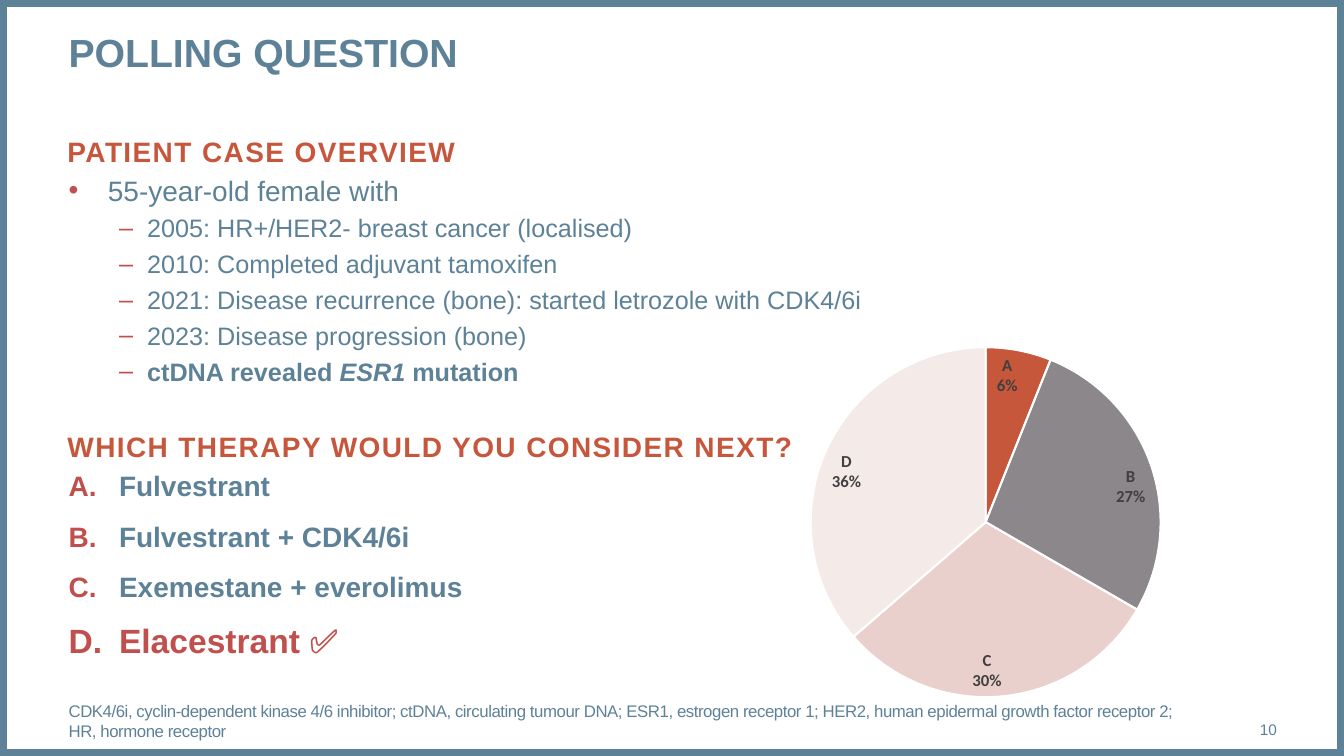
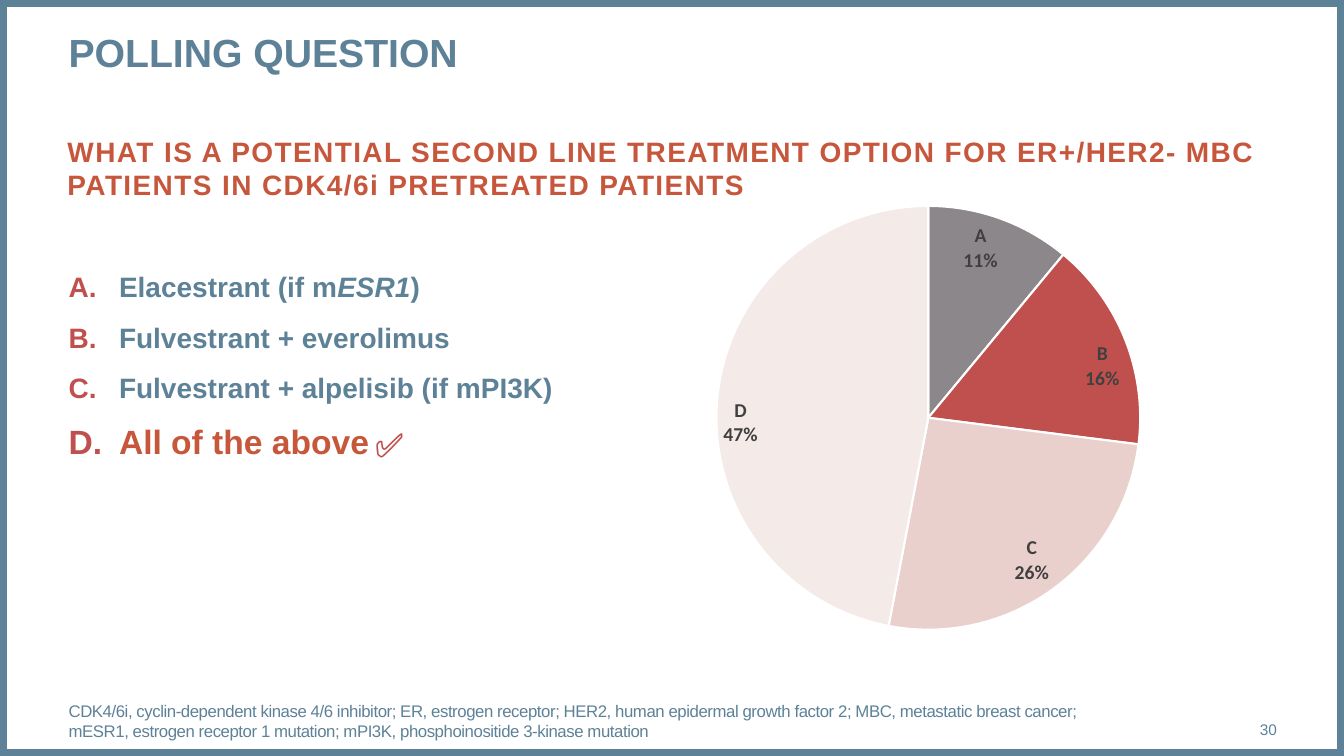
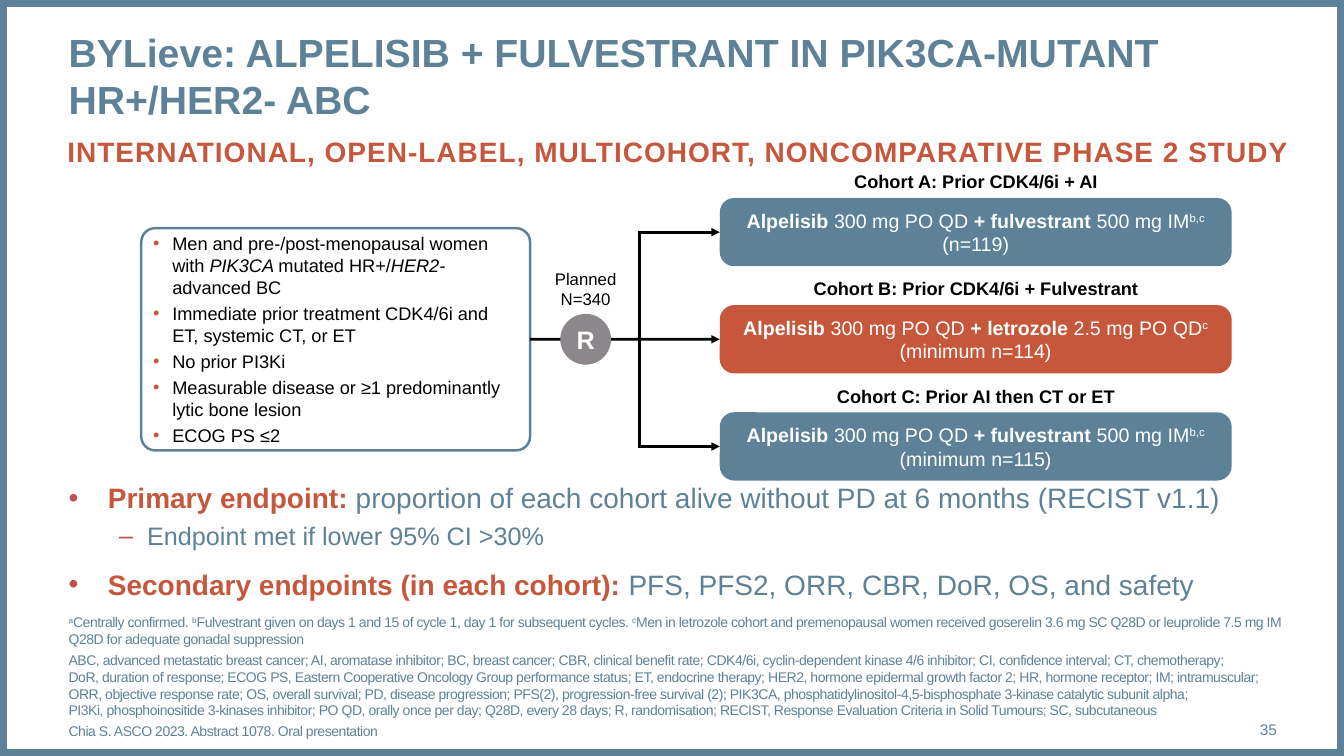
from copy import deepcopy

from lxml import etree
from pptx import Presentation
from pptx.chart.data import CategoryChartData
from pptx.dml.color import RGBColor
from pptx.enum.chart import XL_CHART_TYPE, XL_LABEL_POSITION
from pptx.enum.shapes import MSO_CONNECTOR, MSO_SHAPE
from pptx.enum.text import MSO_ANCHOR, PP_ALIGN
from pptx.oxml.ns import qn
from pptx.util import Cm, Pt

LEFT, CENTER, RIGHT = PP_ALIGN.LEFT, PP_ALIGN.CENTER, PP_ALIGN.RIGHT
TOP, MIDDLE = MSO_ANCHOR.TOP, MSO_ANCHOR.MIDDLE
RECT, ROUNDED, OVAL = MSO_SHAPE.RECTANGLE, MSO_SHAPE.ROUNDED_RECTANGLE, MSO_SHAPE.OVAL
STRAIGHT, PIE = MSO_CONNECTOR.STRAIGHT, XL_CHART_TYPE.PIE
INSIDE_END = XL_LABEL_POSITION.INSIDE_END


class Theme:
    font, chart_font = "Arial", "Calibri"
    blue, heading, orange, red = "5D8298", "C7573C", "C6573B", "C0504D"
    grey, rose, blush = "8B878B", "E9D0CD", "F4EAE7"
    black, white, label = "000000", "FFFFFF", "404040"
    title_size, heading_size, answer_size = 28, 20, 24
    body_size, sub_size, note_size, number_size = 20, 18, 12, 11
    card_size, small_size, source_size = 14, 13, 10


# Paragraph and run formats used more than once
HEADING = dict(size=Theme.heading_size, color=Theme.heading, bold=True, spacing=1, before=12)
BULLET = dict(bullet="•", hang=0.99, before=12)
DASH = dict(bullet="–", indent=1.98, hang=0.71, before=4, level=1, size=Theme.sub_size)
OPTION = dict(bullet="alphaUcPeriod", hang=1.27, before=12, bold=True)
NOTE = dict(spacing=-0.3, before=3)
BOLD, ITALIC, RAISED = dict(bold=True), dict(italic=True), dict(raised=True)
LEAD = dict(bold=True, color=Theme.orange)


def place(slide, box, preset=None, fill=None, line=None, weight=1, corner=None,
          margin=0, anchor=TOP, wrap=True):
    """Add a text box, or a preset shape, at a box given in centimetres."""
    box = [Cm(value) for value in box]
    if preset is None:
        shape = slide.shapes.add_textbox(*box)
    else:
        shape = slide.shapes.add_shape(preset, *box)
        shape.shadow.inherit = False
        if corner is not None:
            shape.adjustments[0] = corner
        if fill:
            shape.fill.solid()
            shape.fill.fore_color.rgb = RGBColor.from_string(fill)
        else:
            shape.fill.background()
        if line:
            shape.line.color.rgb = RGBColor.from_string(line)
            shape.line.width = Pt(weight)
        else:
            shape.line.fill.background()
    frame = shape.text_frame
    frame.word_wrap = wrap
    frame.vertical_anchor = anchor
    frame.margin_left = frame.margin_right = frame.margin_top = frame.margin_bottom = Cm(margin)
    return shape


def write(shape, *runs, align=LEFT, before=0, after=0, level=0, bullet=None,
          bullet_color=Theme.red, hang=0, indent=None, **style):
    """Add a paragraph; a run is a string or a (string, format) pair."""
    frame = shape.text_frame
    paragraph = frame.paragraphs[-1]
    if paragraph.runs:
        paragraph = frame.add_paragraph()
    paragraph.alignment, paragraph.level = align, level
    paragraph.space_before, paragraph.space_after = Pt(before), Pt(after)
    if bullet:
        props = paragraph._p.get_or_add_pPr()
        props.set("marL", str(int(Cm(hang if indent is None else indent))))
        props.set("indent", str(-int(Cm(hang))))
        tint = etree.SubElement(props, qn("a:buClr"))
        etree.SubElement(tint, qn("a:srgbClr"), val=bullet_color)
        etree.SubElement(props, qn("a:buFont"), typeface=Theme.font)
        if len(bullet) > 1:
            etree.SubElement(props, qn("a:buAutoNum"), type=bullet)
        else:
            etree.SubElement(props, qn("a:buChar"), char=bullet)
    for item in runs:
        text, change = (item, {}) if isinstance(item, str) else item
        if text == "\n":
            paragraph.add_line_break()
            paragraph._p[-1].append(deepcopy(paragraph.runs[-1]._r.rPr))
            continue
        look = {**style, **change}
        run = paragraph.add_run()
        run.text = text
        run.font.name = Theme.font
        run.font.size = Pt(look.get("size", Theme.body_size))
        run.font.bold = look.get("bold", False)
        run.font.italic = look.get("italic", False)
        run.font.color.rgb = RGBColor.from_string(look.get("color", Theme.blue))
        if look.get("spacing"):
            run._r.rPr.set("spc", str(round(look["spacing"] * 100)))
        if look.get("raised"):
            run._r.rPr.set("baseline", "30000")


deck = Presentation()
deck.slide_width, deck.slide_height = Cm(33.87), Cm(19.05)

# Border, page number and title of every slide
pages = []
for number, title in [
    ("10", "POLLING QUESTION"),
    ("30", "POLLING QUESTION"),
    ("35", "BYLieve: ALPELISIB + FULVESTRANT IN PIK3CA-MUTANT HR+/HER2- ABC"),
]:
    page = deck.slides.add_slide(deck.slide_layouts[6])
    place(page, (0, 0, 33.87, 19.05), RECT, line=Theme.blue, weight=10)
    write(place(page, (30, 17.86, 2.18, 1.02), anchor=MIDDLE), number,
          align=RIGHT, size=Theme.number_size)
    write(place(page, (1.73, 0.71, 30.45, 2.39)), title, size=Theme.title_size, bold=True)
    pages.append(page)
case_page, second_line_page, trial_page = pages

# Patient case
write(place(case_page, (1.7, 3.38, 30.48, 1.96)), "PATIENT CASE OVERVIEW", **HEADING)
history = place(case_page, (1.73, 4.37, 30.45, 5.56))
write(history, "55-year-old female with", **BULLET)
for event in [
    "2005: HR+/HER2- breast cancer (localised)",
    "2010: Completed adjuvant tamoxifen",
    "2021: Disease recurrence (bone): started letrozole with CDK4/6i",
    "2023: Disease progression (bone)",
]:
    write(history, event, **DASH)
write(history, "ctDNA revealed ", ("ESR1", ITALIC), " mutation", bold=True, **DASH)

# Polls: question, options, abbreviations and votes
polls = [
    dict(page=case_page, question=["WHICH THERAPY WOULD YOU CONSIDER NEXT?"],
         question_top=10.82, options_top=11.81,
         options=[["Fulvestrant"], ["Fulvestrant + CDK4/6i"], ["Exemestane + everolimus"]],
         answer=["Elacestrant ", ("✅", dict(bold=False))], answer_color=Theme.red,
         note="CDK4/6i, cyclin-dependent kinase 4/6 inhibitor; ctDNA, circulating tumour DNA; "
              "ESR1, estrogen receptor 1; HER2, human epidermal growth factor receptor 2; "
              "HR, hormone receptor",
         note_width=28.27, chart=(16.05, 7.24, 17.58, 10.69), diameter=8.82, label_size=12,
         votes=[6, 27, 30, 36], colors=[Theme.orange, Theme.grey, Theme.rose, Theme.blush]),
    dict(page=second_line_page,
         question=["WHAT IS A POTENTIAL SECOND LINE TREATMENT OPTION FOR ER+/HER2- MBC", "\n",
                   "PATIENTS IN CDK4/6i PRETREATED PATIENTS"],
         question_top=3.38, options_top=6.8,
         options=[["Elacestrant (if m", ("ESR1", ITALIC), ")"], ["Fulvestrant + everolimus"],
                  ["Fulvestrant + alpelisib (if mPI3K)"]],
         answer=["All of the above"], answer_color=Theme.orange,
         note="CDK4/6i, cyclin-dependent kinase 4/6 inhibitor; ER, estrogen receptor; "
              "HER2, human epidermal growth factor 2; MBC, metastatic breast cancer; "
              "mESR1, estrogen receptor 1 mutation; mPI3K, phosphoinositide 3-kinase mutation",
         note_width=26, chart=(13.59, 3.61, 19.61, 12.62), diameter=10.68, label_size=14,
         votes=[11, 16, 26, 47], colors=[Theme.grey, Theme.red, Theme.rose, Theme.blush]),
]
for poll in polls:
    page = poll["page"]
    write(place(page, (1.7, poll["question_top"], 30.48, 1.96)), *poll["question"], **HEADING)
    options = place(page, (1.73, poll["options_top"], 30.45, 5.56))
    for option in poll["options"]:
        write(options, *option, **OPTION)
    write(options, *poll["answer"], size=Theme.answer_size, color=poll["answer_color"], **OPTION)
    write(place(page, (1.73, 17.65, poll["note_width"], 1.02), anchor=MIDDLE), poll["note"],
          size=Theme.note_size, **NOTE)

    # Votes
    votes = CategoryChartData()
    votes.categories = list("ABCD")
    votes.add_series("Series 1", poll["votes"])
    left, top, width, height = poll["chart"]
    chart = page.shapes.add_chart(PIE, Cm(left), Cm(top), Cm(width), Cm(height), votes).chart
    chart.has_title = chart.has_legend = False
    chart.font.name, chart.font.size = Theme.chart_font, Pt(10)
    chart.plots[0].vary_by_categories = True
    series = chart.plots[0].series[0]
    for index, color in enumerate(poll["colors"]):
        slice_format = series.points[index].format
        slice_format.fill.solid()
        slice_format.fill.fore_color.rgb = RGBColor.from_string(color)
        slice_format.line.color.rgb = RGBColor.from_string(Theme.white)
        slice_format.line.width = Pt(1.5)
    labels = series.data_labels
    labels.show_category_name = labels.show_percentage = True
    labels.show_value = False
    labels.number_format, labels.number_format_is_linked = "0%", False
    labels.position = INSIDE_END
    labels.font.name, labels.font.size = Theme.chart_font, Pt(poll["label_size"])
    labels.font.bold = True
    labels.font.color.rgb = RGBColor.from_string(Theme.label)
    separator = etree.Element(qn("c:separator"))
    separator.text = "\n"
    labels._element.find(qn("c:showBubbleSize")).addnext(separator)

    # Pie centred across the chart, just above its lower edge
    plot_area = chart._chartSpace.find(".//" + qn("c:plotArea"))
    for automatic in plot_area.findall(qn("c:layout")):
        plot_area.remove(automatic)
    layout = etree.Element(qn("c:layout"))
    manual = etree.SubElement(layout, qn("c:manualLayout"))
    share_x, share_y = poll["diameter"] / width, poll["diameter"] / height
    for tag, value in [
        ("layoutTarget", "inner"), ("xMode", "edge"), ("yMode", "edge"),
        ("x", (1 - share_x) / 2), ("y", 1 - share_y - 0.36 / height),
        ("w", share_x), ("h", share_y),
    ]:
        etree.SubElement(manual, qn("c:" + tag), val=str(value))
    plot_area.insert(0, layout)

write(place(second_line_page, (9.45, 10.69, 1.17, 1.02), wrap=False), "✅",
      size=Theme.answer_size, color=Theme.red)

# Trial: heading and endpoints
write(place(trial_page, (1.7, 3.38, 31.65, 1.96)),
      "INTERNATIONAL, OPEN-LABEL, MULTICOHORT, NONCOMPARATIVE PHASE 2 STUDY",
      **{**HEADING, "spacing": 0.7})
endpoints = place(trial_page, (1.73, 12.12, 30.45, 3.78))
write(endpoints, ("Primary endpoint: ", LEAD),
      "proportion of each cohort alive without PD at 6 months (RECIST v1.1)", **BULLET)
write(endpoints, "Endpoint met if lower 95% CI >30%", **DASH)
write(endpoints, ("Secondary endpoints (in each cohort): ", LEAD),
      "PFS, PFS2, ORR, CBR, DoR, OS, and safety", **BULLET)

# Trial: footnotes
footnotes = place(trial_page, (1.73, 16.54, 30.99, 1.02), anchor=MIDDLE)
for footnote in [
    [("a", RAISED), "Centrally confirmed. ", ("b", RAISED),
     "Fulvestrant given on days 1 and 15 of cycle 1, day 1 for subsequent cycles. ",
     ("c", RAISED),
     "Men in letrozole cohort and premenopausal women received goserelin 3.6 mg SC Q28D "
     "or leuprolide 7.5 mg IM Q28D for adequate gonadal suppression"],
    ["ABC, advanced metastatic breast cancer; AI, aromatase inhibitor; BC, breast cancer; "
     "CBR, clinical benefit rate; CDK4/6i, cyclin-dependent kinase 4/6 inhibitor; "
     "CI, confidence interval; CT, chemotherapy;", "\n",
     "DoR, duration of response; "
     "ECOG PS, Eastern Cooperative Oncology Group performance status; ET, endocrine therapy; "
     "HER2, hormone epidermal growth factor 2; HR, hormone receptor; IM; intramuscular;", "\n",
     "ORR, objective response rate; OS, overall survival; PD, disease progression; "
     "PFS(2), progression-free survival (2); "
     "PIK3CA, phosphatidylinositol-4,5-bisphosphate 3-kinase catalytic subunit alpha;", "\n",
     "PI3Ki, phosphoinositide 3-kinases inhibitor; PO QD, orally once per day; "
     "Q28D, every 28 days; R, randomisation; "
     "RECIST, Response Evaluation Criteria in Solid Tumours; SC, subcutaneous"],
    ["Chia S. ASCO 2023. Abstract 1078. Oral presentation"],
]:
    write(footnotes, *footnote, size=Theme.source_size, **NOTE)

# Trial: eligibility criteria, centred on the axis of the flow
axis, spine = 8.55, 16.11
criteria = place(trial_page, (3.56, axis - 2.8, 9.8, 5.6), ROUNDED, fill=Theme.white,
                 line=Theme.blue, weight=1.75, corner=0.063, margin=0.2, anchor=MIDDLE)
for criterion in [
    ["Men and pre-/post-menopausal women with ", ("PIK3CA ", ITALIC), "mutated HR+/",
     ("HER2-", ITALIC), " advanced BC"],
    ["Immediate prior treatment CDK4/6i and ET, systemic CT, or ET"],
    ["No prior PI3Ki"],
    ["Measurable disease or ≥1 predominantly lytic bone lesion"],
    ["ECOG PS ≤2"],
]:
    write(criteria, *criterion, size=Theme.small_size, color=Theme.black, after=3,
          bullet="•", bullet_color=Theme.orange, hang=0.48)

# Trial: cohorts and the lines that lead to them
flow_lines = []
for row, (cohort, partner, dose, marks, count, color) in enumerate([
    ("Cohort A: Prior CDK4/6i + AI", "fulvestrant", "500 mg IM", "b,c", "(n=119)", Theme.blue),
    ("Cohort B: Prior CDK4/6i + Fulvestrant", "letrozole", "2.5 mg PO QD", "c",
     "(minimum n=114)", Theme.orange),
    ("Cohort C: Prior AI then CT or ET", "fulvestrant", "500 mg IM", "b,c",
     "(minimum n=115)", Theme.blue),
]):
    center = axis + 2.7 * (row - 1)
    write(place(trial_page, (18.14, center - 1.55, 12.9, 0.56)), cohort, align=CENTER,
          size=Theme.small_size, color=Theme.black, bold=True)
    regimen = place(trial_page, (18.14, center - 0.86, 12.9, 1.72), ROUNDED, fill=color,
                    corner=0.211, margin=0.2, anchor=MIDDLE)
    write(regimen, ("Alpelisib ", BOLD), "300 mg PO QD ", (f"+ {partner} ", BOLD), dose,
          (marks, RAISED), "\n", count, align=CENTER, after=2,
          size=Theme.card_size, color=Theme.white)
    arrow = trial_page.shapes.add_connector(STRAIGHT, Cm(spine), Cm(center), Cm(18.14), Cm(center))
    if row == 1:
        arrow.begin_connect(criteria, 3)
    arrow.end_connect(regimen, 1)
    flow_lines.append(arrow)
flow_lines.append(trial_page.shapes.add_connector(
    STRAIGHT, Cm(spine), Cm(axis + 2.74), Cm(spine), Cm(axis - 2.74)))
for position, flow_line in enumerate(flow_lines):
    flow_line.line.color.rgb = RGBColor.from_string(Theme.black)
    flow_line.line.width = Pt(2)
    etree.SubElement(flow_line._element.spPr, qn("a:effectLst"))
    if position < 3:
        etree.SubElement(flow_line.line._get_or_add_ln(), qn("a:tailEnd"), type="triangle")

# Trial: randomisation, with the sample size centred above the circle
write(place(trial_page, (13.66, 6.78, 2.2, 1.02)), "Planned", "\n", "N=340",
      align=CENTER, size=Theme.note_size, color=Theme.black)
write(place(trial_page, (14.12, axis - 0.64, 1.28, 1.28), OVAL, fill=Theme.grey, anchor=MIDDLE),
      "R", align=CENTER, size=Theme.sub_size, color=Theme.white, bold=True)

deck.save("out.pptx")
